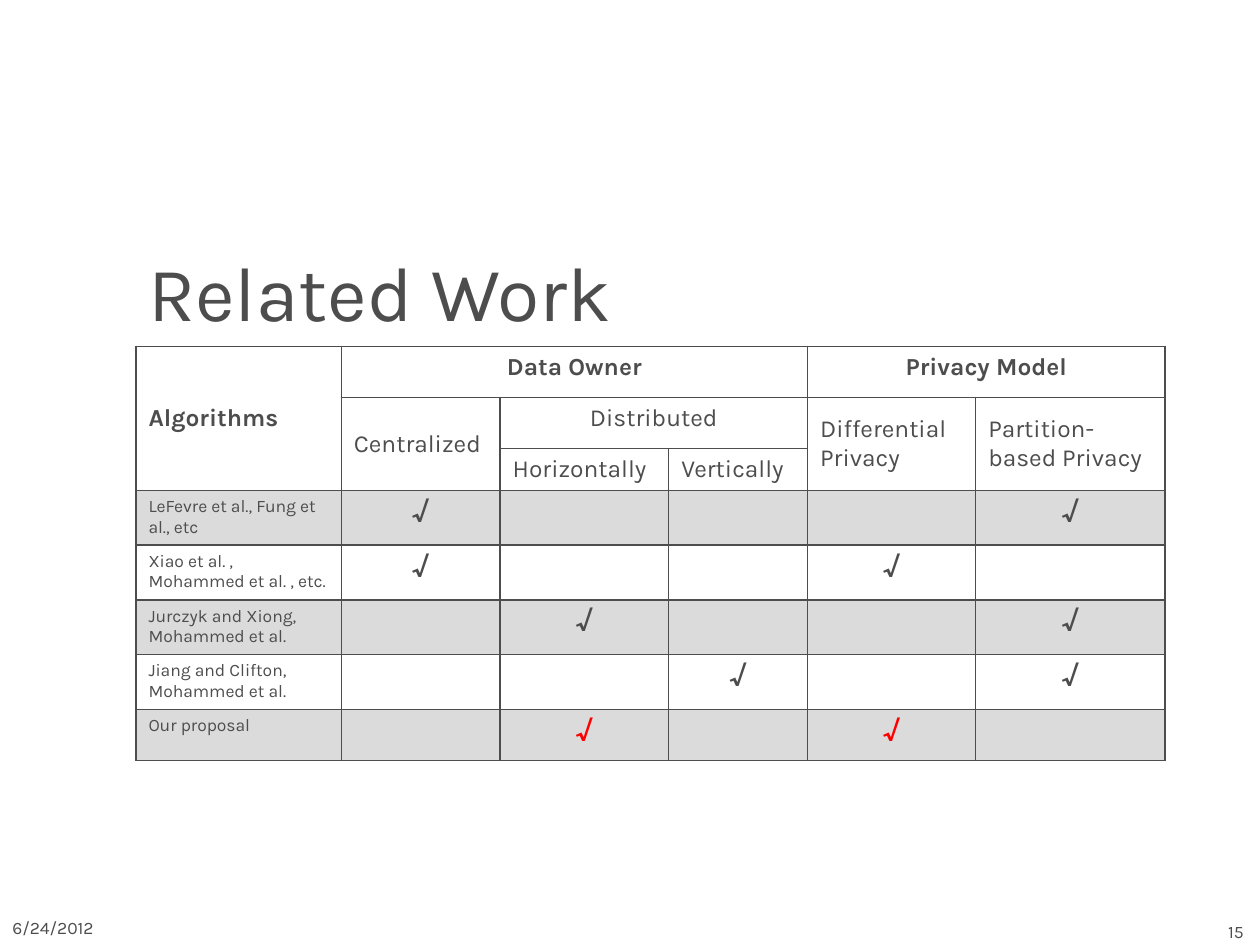
from lxml import etree
from pptx import Presentation
from pptx.dml.color import RGBColor
from pptx.enum.text import MSO_ANCHOR, PP_ALIGN
from pptx.oxml.ns import qn
from pptx.util import Cm, Pt

LEFT, MID, RIGHT = PP_ALIGN.LEFT, PP_ALIGN.CENTER, PP_ALIGN.RIGHT
TOP, CENTRE = MSO_ANCHOR.TOP, MSO_ANCHOR.MIDDLE

FONT = "Karla"
DARK = RGBColor(0x4D, 0x4D, 0x4D)
GREY = RGBColor(0xDB, 0xDB, 0xDB)
RED = RGBColor(0xFF, 0, 0)

WIDTHS = [4.14, 3.2, 3.4, 2.8, 3.39, 3.82]
HEIGHTS = [1.03, 1.03, 0.69] + [1.03] * 5

# Header cells: row, column, rows spanned, columns spanned, text, bold, align, anchor
HEADS = [
    (0, 0, 3, 1, "Algorithms", True, LEFT, CENTRE),
    (0, 1, 1, 3, "Data Owner", True, MID, TOP),
    (0, 4, 1, 2, "Privacy Model", True, MID, TOP),
    (1, 1, 2, 1, "Centralized", False, LEFT, CENTRE),
    (1, 2, 1, 2, "Distributed", False, MID, TOP),
    (1, 4, 2, 1, "Differential Privacy", False, LEFT, CENTRE),
    (1, 5, 2, 1, "Partition-based Privacy", False, LEFT, CENTRE),
    (2, 2, 1, 1, "Horizontally", False, LEFT, TOP),
    (2, 3, 1, 1, "Vertically", False, LEFT, TOP),
]

# Body rows: algorithm, ticked columns, tick colour
WORKS = [
    ("LeFevre et al., Fung et al., etc", (1, 5), DARK),
    ("Xiao et al. , Mohammed et al. , etc.", (1, 4), DARK),
    ("Jurczyk and Xiong, Mohammed et al.", (2, 5), DARK),
    ("Jiang and Clifton, Mohammed et al.", (3, 5), DARK),
    ("Our proposal", (2, 4), RED),
]


def write(frame, text, size, color=DARK, bold=False, align=LEFT):
    frame.text = text
    para = frame.paragraphs[0]
    para.alignment = align
    font = para.runs[0].font
    font.name, font.size, font.bold = FONT, Pt(size), bold
    font.color.rgb = color


def add_text(slide, left, top, width, height, text, size, align=LEFT):
    box = slide.shapes.add_textbox(Cm(left), Cm(top), Cm(width), Cm(height))
    frame = box.text_frame
    frame.word_wrap = True
    frame.vertical_anchor = CENTRE
    write(frame, text, size, align=align)


def add_lines(cell):
    props = cell._tc.get_or_add_tcPr()
    for spot, side in enumerate(("lnL", "lnR", "lnT", "lnB")):
        line = etree.Element(qn(f"a:{side}"), w=str(Pt(1)))
        fill = etree.SubElement(line, qn("a:solidFill"))
        etree.SubElement(fill, qn("a:srgbClr"), val=str(DARK))
        props.insert(spot, line)


def add_grid(slide, left, top):
    frame = slide.shapes.add_table(
        len(HEIGHTS), len(WIDTHS), Cm(left), Cm(top),
        Cm(sum(WIDTHS)), Cm(sum(HEIGHTS)))
    table = frame.table
    table.first_row = table.horz_banding = False
    for col, width in zip(table.columns, WIDTHS):
        col.width = Cm(width)
    for row, height in zip(table.rows, HEIGHTS):
        row.height = Cm(height)

    # Fills and borders: every other body row is shaded
    for r, row in enumerate(table.rows):
        for cell in row.cells:
            if r >= 3 and r % 2:
                cell.fill.solid()
                cell.fill.fore_color.rgb = GREY
            else:
                cell.fill.background()
            add_lines(cell)
    return table


def fill_heads(table):
    for r, c, down, over, text, bold, align, anchor in HEADS:
        cell = table.cell(r, c)
        if down * over > 1:
            cell.merge(table.cell(r + down - 1, c + over - 1))
        cell.vertical_anchor = anchor
        write(cell.text_frame, text, 14, bold=bold, align=align)


def fill_works(table):
    for r, (name, ticks, color) in enumerate(WORKS, 3):
        write(table.cell(r, 0).text_frame, name, 10)
        for c in ticks:
            write(table.cell(r, c).text_frame, "√", 16, color, True, MID)


def main():
    deck = Presentation()
    deck.slide_width, deck.slide_height = Cm(25.4), Cm(19.05)
    slide = deck.slides.add_slide(deck.slide_layouts[6])

    # Footer
    add_text(slide, 23.72, 18.44, 1.6, 0.69, "15", 10, RIGHT)
    add_text(slide, 0, 18.36, 2.69, 0.69, "6/24/2012", 10)

    # Title
    add_text(slide, 2.74, 4.88, 20.32, 1.98, "Related Work", 44)

    # Comparison table
    table = add_grid(slide, 2.74, 6.98)
    fill_heads(table)
    fill_works(table)

    deck.save("out.pptx")


if __name__ == "__main__":
    main()
